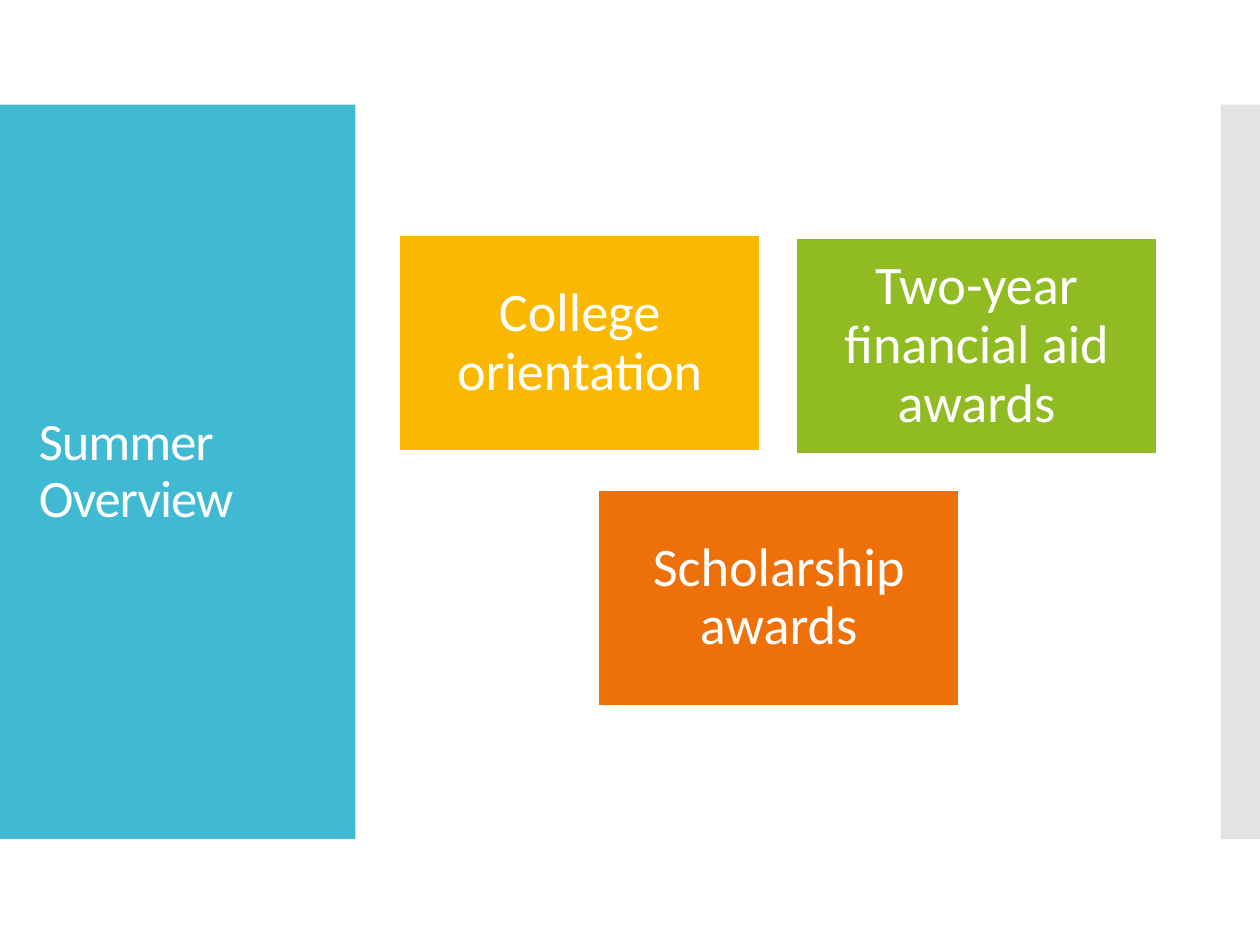
from dataclasses import dataclass

from lxml.etree import SubElement
from pptx import Presentation
from pptx.dml.color import RGBColor
from pptx.enum.shapes import MSO_SHAPE
from pptx.enum.text import MSO_ANCHOR, PP_ALIGN
from pptx.oxml.ns import qn
from pptx.shapes.autoshape import Shape
from pptx.slide import Slide
from pptx.text.text import TextFrame, _Run
from pptx.util import Inches, Pt

COLORS = {
    "white": "FFFFFF",
    "teal": "40BAD2",
    "grey": "C8C8C8",
    "yellow": "FAB900",
    "green": "90BB23",
    "orange": "EE7008",
}
FONT = "Calibri"
BAND_TOP, BAND_HEIGHT = 0.83, 5.83
CARD_WIDTH, CARD_HEIGHT, CARD_INSET = 2.86, 1.71, 0.13


@dataclass
class Card:
    label: str
    left: float
    top: float
    color: str


CARDS = [
    Card("College orientation", 3.17, 1.87, "yellow"),
    Card("Two-year financial aid awards", 6.32, 1.89, "green"),
    Card("Scholarship awards", 4.75, 3.89, "orange"),
]


def rgb(color: str) -> RGBColor:
    return RGBColor.from_string(COLORS[color])


def add_block(slide: Slide, left: float, top: float, width: float,
              height: float, color: str) -> Shape:
    block = slide.shapes.add_shape(
        MSO_SHAPE.RECTANGLE, Inches(left), Inches(top), Inches(width), Inches(height))
    block.shadow.inherit = False
    block.fill.solid()
    block.fill.fore_color.rgb = rgb(color)
    block.line.fill.background()
    return block


def write(frame: TextFrame, text: str, size: float, align: PP_ALIGN) -> _Run:
    frame.word_wrap = True
    frame.vertical_anchor = MSO_ANCHOR.MIDDLE
    paragraph = frame.paragraphs[0]
    paragraph.alignment = align
    paragraph.line_spacing = 0.9
    run = paragraph.add_run()
    run.text = text
    run.font.name = FONT
    run.font.size = Pt(size)
    run.font.color.rgb = rgb("white")
    return run


def add_card(slide: Slide, card: Card) -> None:
    block = add_block(slide, card.left, card.top, CARD_WIDTH, CARD_HEIGHT, card.color)
    block.line.color.rgb = rgb("white")
    block.line.width = Pt(0.85)
    frame = block.text_frame
    frame.margin_left = frame.margin_right = Inches(CARD_INSET)
    frame.margin_top = frame.margin_bottom = Inches(CARD_INSET)
    write(frame, card.label, 31, PP_ALIGN.CENTER)


def main() -> None:
    deck = Presentation()
    deck.slide_width, deck.slide_height = Inches(10), Inches(7.5)
    slide = deck.slides.add_slide(deck.slide_layouts[6])

    # Side panel and half-transparent edge strip
    add_block(slide, 0, BAND_TOP, 2.82, BAND_HEIGHT, "teal")
    strip = add_block(slide, 9.69, BAND_TOP, 0.31, BAND_HEIGHT, "grey")
    strip_color = strip.fill._xPr.find(qn("a:solidFill")).find(qn("a:srgbClr"))
    SubElement(strip_color, qn("a:alpha")).set("val", "50000")

    # Title, with slightly tightened letters
    title = slide.shapes.add_textbox(Inches(0.21), Inches(1.23), Inches(2.42), Inches(5.03))
    heading = write(title.text_frame, "Summer Overview", 30, PP_ALIGN.LEFT)
    heading.font._element.set("spc", "-60")

    # Topic cards
    for card in CARDS:
        add_card(slide, card)

    deck.save("out.pptx")


if __name__ == "__main__":
    main()
